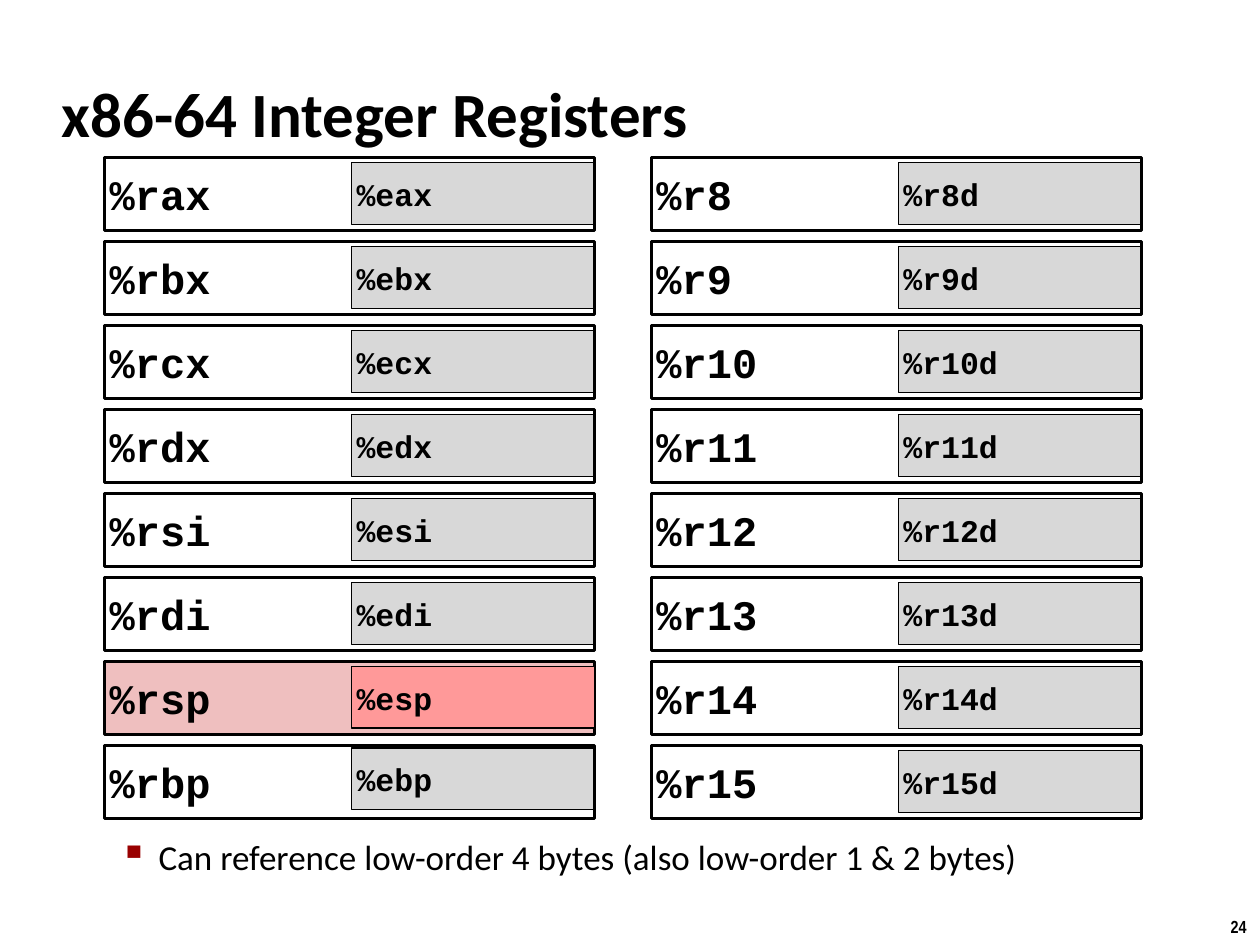
from lxml.etree import SubElement
from pptx import Presentation
from pptx.dml.color import RGBColor as RGB
from pptx.enum.shapes import MSO_SHAPE as Shape
from pptx.enum.text import MSO_ANCHOR as Anchor, MSO_AUTO_SIZE as Fit, PP_ALIGN as Align
from pptx.oxml.ns import qn
from pptx.util import Inches as In, Pt

TITLE = "x86-64 Integer Registers"
NOTE = "Can reference low-order 4 bytes (also low-order 1 & 2 bytes)"
PAGE = "24"
COLUMNS = [
    [("%rax", "%eax"), ("%rbx", "%ebx"), ("%rcx", "%ecx"), ("%rdx", "%edx"),
     ("%rsi", "%esi"), ("%rdi", "%edi"), ("%rsp", "%esp"), ("%rbp", "%ebp")],
    [(f"%r{n}", f"%r{n}d") for n in range(8, 16)],
]
STACK = "%rsp"
COLORS = {"ink": "000000", "low": "D8D8D8", "stack": "EFBFBF",
          "stack low": "FF9999", "bullet": "990000"}

# Register grid, in inches
LEFT, TOP = 0.83, 1.25
STEP_X, STEP_Y = 4.34, 2 / 3
WIDE, HIGH = 3.89, 0.58
LOW_X, LOW_W, LOW_H = 1.96, 1.93, 0.49
NUDGE = {"%ebp": -0.02}


def color(name):
    return RGB.from_string(COLORS[name])


def style(par, font, size, bold=True):
    for run in par.runs:
        run.font.name, run.font.size, run.font.bold = font, Pt(size), bold
        run.font.color.rgb = color("ink")


def add_box(slide, text, x, y, w, h, fill, line, size):
    box = slide.shapes.add_shape(Shape.RECTANGLE, In(x), In(y), In(w), In(h))
    box.shadow.inherit = False
    if fill:
        box.fill.solid()
        box.fill.fore_color.rgb = color(fill)
    else:
        box.fill.background()
    box.line.color.rgb = color("ink")
    box.line.width = Pt(line)
    frame = box.text_frame
    frame.margin_left = frame.margin_right = In(0.04)
    frame.margin_top = frame.margin_bottom = In(0.04)
    frame.vertical_anchor = Anchor.MIDDLE
    frame.text = text
    par = frame.paragraphs[0]
    par.alignment = Align.LEFT
    style(par, "Courier New", size)


def add_register(slide, name, low, x, y):
    """Draw the 64-bit box and its low half; a filled box goes behind the half."""
    stack = name == STACK
    whole = (name, x, y, WIDE, HIGH, "stack" if stack else None, 2, 24)
    half = (low, x + LOW_X, y + 0.04 + NUDGE.get(low, 0), LOW_W, LOW_H,
            "stack low" if stack else "low", 1 if stack else 0.75, 18)
    for part in (whole, half) if stack else (half, whole):
        add_box(slide, *part)


def add_text(slide, text, x, y, w, h, wrap=True):
    frame = slide.shapes.add_textbox(In(x), In(y), In(w), In(h)).text_frame
    frame.word_wrap = wrap
    frame.text = text
    return frame


def set_bullet(par, char, indent, hang):
    props = par._p.get_or_add_pPr()
    props.set("marL", str(In(indent)))
    props.set("indent", str(-In(hang)))
    tint = SubElement(props, qn("a:buClr"))
    SubElement(tint, qn("a:srgbClr"), val=COLORS["bullet"])
    SubElement(props, qn("a:buSzPct"), val="110000")
    SubElement(props, qn("a:buChar"), char=char)


def main():
    deck = Presentation()
    deck.slide_width, deck.slide_height = In(10), In(7.5)
    slide = deck.slides.add_slide(deck.slide_layouts[5])

    title = slide.shapes.title
    title.left, title.top, title.width, title.height = In(0.39), In(0.48), In(8.3), In(0.83)
    title.text_frame.text = TITLE
    title.text_frame.vertical_anchor = Anchor.MIDDLE
    head = title.text_frame.paragraphs[0]
    head.alignment = Align.LEFT
    style(head, "Calibri", 36)

    for col, regs in enumerate(COLUMNS):
        for row, (name, low) in enumerate(regs):
            add_register(slide, name, low, LEFT + col * STEP_X, TOP + row * STEP_Y)

    note = add_text(slide, NOTE, 0.35, 6.58, 8.02, 0.92).paragraphs[0]
    note.space_before = Pt(4)
    set_bullet(note, "▪", 0.81, 0.31)
    style(note, "Calibri", 20, bold=False)

    page = add_text(slide, PAGE, 9.66, 7.22, 0.34, 0.27, wrap=False)
    page.auto_size = Fit.SHAPE_TO_FIT_TEXT
    page.paragraphs[0].alignment = Align.CENTER
    style(page.paragraphs[0], "Arial Narrow", 10)

    deck.save("out.pptx")


if __name__ == "__main__":
    main()
